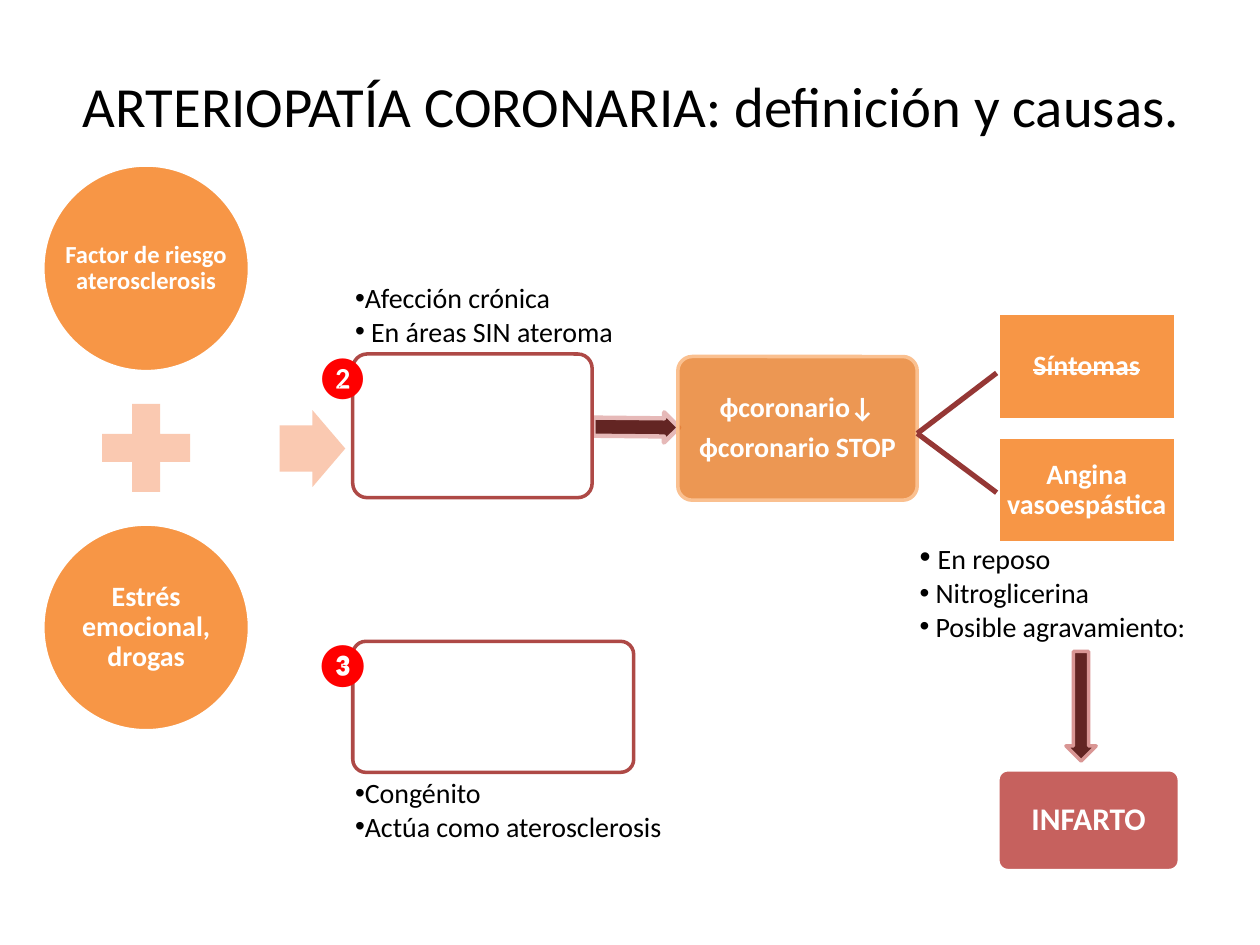
"""Build the coronary artery disease slide."""
from lxml import etree
from pptx import Presentation, util as u
from pptx.dml.color import RGBColor
from pptx.enum import shapes, text
from pptx.oxml.ns import qn

KIND = shapes.MSO_SHAPE
ORANGE, PEACH, MAROON, RED = "F79646", "FAC9B1", "632523", "AE4946"
WHITE, BLACK = "FFFFFF", "000000"
LABEL = {"size": u.Pt(16), "bold": True, "name": "Calibri"}
BODY = {"size": u.Pt(16), "name": "Calibri"}


def paint(color_format, color):
    """Set a color format from a hex string."""
    color_format.rgb = RGBColor.from_string(color)


def style(target, values):
    """Set each attribute in a dict of format values."""
    for name, value in values.items():
        setattr(target, name, value)


def inches(box):
    """Convert a sequence of numbers to lengths."""
    return [u.Inches(value) for value in box]


def add_block(slide, kind, box, fill, line=None, width=2, alpha=None, adjustments=()):
    """Add a filled preset shape."""
    shape = slide.shapes.add_shape(kind, *inches(box))
    shape.shadow.inherit = False
    shape.fill.solid()
    paint(shape.fill.fore_color, fill)
    if alpha:
        color = shape.fill._xPr.find(qn("a:solidFill"))[0]
        etree.SubElement(color, qn("a:alpha")).set("val", str(alpha * 1000))
    if line:
        paint(shape.line.color, line)
        shape.line.width = u.Pt(width)
    else:
        shape.line.fill.background()
    for index, value in enumerate(adjustments):
        shape.adjustments[index] = value
    return shape


def write(shape, lines, font, color=WHITE, inset=0.07, strike=False):
    """Write centred label lines into a shape."""
    frame = shape.text_frame
    style(frame, {"word_wrap": True, "vertical_anchor": text.MSO_ANCHOR.MIDDLE})
    style(frame, {f"margin_{side}": u.Inches(inset) for side in ("left", "right", "top", "bottom")})
    for index, line in enumerate(lines):
        paragraph = frame.add_paragraph() if index else frame.paragraphs[0]
        style(paragraph, {"alignment": text.PP_ALIGN.CENTER, "line_spacing": 0.9})
        if index:
            paragraph.space_before = u.Pt(5.6)
        run = paragraph.add_run()
        run.text = line
        style(run.font, font)
        paint(run.font.color, color)
        if strike:
            run._r.get_or_add_rPr().set("strike", "sngStrike")


def add_bullets(slide, box, lines):
    """Add a text box of unindented bullets."""
    frame = slide.shapes.add_textbox(*inches(box)).text_frame
    frame.word_wrap = True
    for index, line in enumerate(lines):
        paragraph = frame.add_paragraph() if index else frame.paragraphs[0]
        properties = paragraph._p.get_or_add_pPr()
        etree.SubElement(properties, qn("a:buFont")).set("typeface", "Arial")
        etree.SubElement(properties, qn("a:buChar")).set("char", "•")
        runs = [(" ", 18), (line.strip(), 16)] if line == " En reposo" else [(line, 16)]
        for words, size in runs:
            run = paragraph.add_run()
            run.text = words
            style(run.font, {**BODY, "size": u.Pt(size)})
            paint(run.font.color, BLACK)


def add_number(slide, box, mark, bold):
    """Add a red circled number."""
    frame = slide.shapes.add_textbox(*inches(box)).text_frame
    frame.word_wrap = True
    run = frame.paragraphs[0].add_run()
    run.text = mark
    style(run.font, {"size": u.Pt(24), "name": "Calibri", "bold": bold})
    paint(run.font.color, "FF0000")


def add_title(slide, box):
    """Add the slide title."""
    title = slide.shapes.add_textbox(*inches(box))
    font = {"size": u.Pt(32.4), "name": "Calibri"}
    write(title, ["ARTERIOPATÍA CORONARIA: definición y causas."], font, BLACK, 0.05)
    title.text_frame.paragraphs[0].line_spacing = 1


def add_factors(slide, box):
    """Add the two summed causes and the arrow that leaves them."""
    left, top, width, height = box
    causes = [("Factor de riesgo aterosclerosis", 14, top),
              ("Estrés emocional, drogas", 16, top + height - width)]
    for words, size, y in causes:
        circle = (left, y, width, width)
        add_block(slide, KIND.OVAL, circle, ORANGE, WHITE)
        label = slide.shapes.add_textbox(*inches(circle))
        write(label, [words], {**LABEL, "size": u.Pt(size)}, inset=0.02)
    plus, middle = 0.95, top + height / 2
    add_block(slide, KIND.MATH_PLUS,
              (left + (width - plus) / 2, middle - plus / 2, plus, plus), PEACH)
    add_block(slide, KIND.RIGHT_ARROW, (left + width + 0.24, middle - 0.3, 0.52, 0.61),
              PEACH, adjustments=(0.6, 0.5))


def add_mechanism(slide, box, mark, bullets, bullet_box, bold=False):
    """Add an empty numbered frame with its bullets."""
    left, top, _, _ = box
    add_block(slide, KIND.ROUNDED_RECTANGLE, box, WHITE, RED, adjustments=(0.1,))
    add_bullets(slide, bullet_box, bullets)
    add_number(slide, (left - 0.4, top - 0.08, 0.47, 0.5), mark, bold)


def add_flow(slide, box):
    """Add the coronary flow box and the arrow that reaches it."""
    left, top, _, height = box
    arrow = add_block(slide, KIND.RIGHT_ARROW, (left - 0.67, top + height / 2 - 0.13, 0.68, 0.24),
                      MAROON, "E6B9B8", 2.5, adjustments=(0.6, 0.5))
    arrow.rotation = 0.6
    flow = add_block(slide, KIND.ROUNDED_RECTANGLE, box, "E46C0A", "FAC090",
                     alpha=70, adjustments=(0.1,))
    write(flow, ["фcoronario↓", "фcoronario STOP"], LABEL)


def add_outcomes(slide, box):
    """Add the two outcomes and the lines that branch to them."""
    left, top, width, height = box
    block = 0.84
    outcomes = [("Síntomas", top, True, 2.96),
                ("Angina vasoespástica", top + height - block, False, 3.91)]
    for words, y, strike, end in outcomes:
        shape = add_block(slide, KIND.RECTANGLE, (left, y, width, block), ORANGE, WHITE)
        write(shape, [words], LABEL, strike=strike)
        branch = slide.shapes.add_connector(
            shapes.MSO_CONNECTOR.STRAIGHT, *inches((left - 0.64, 3.44, left - 0.01, end)))
        paint(branch.line.color, "953735")
        branch.line.width = u.Pt(3)
        etree.SubElement(branch._element.spPr, qn("a:effectLst"))


def add_worsening(slide, box):
    """Add the angina notes and the infarction below them."""
    left, top, width, height = box
    add_bullets(slide, (left, top, width, 0.94),
                [" En reposo", " Nitroglicerina", " Posible agravamiento:"])
    add_block(slide, KIND.DOWN_ARROW, (left + width / 2, top + 0.95, 0.24, 0.87),
              MAROON, "D99694")
    infarct = add_block(slide, KIND.ROUNDED_RECTANGLE,
                        (left + 0.72, top + height - 0.8, 1.44, 0.8),
                        "C0504D", WHITE, alpha=90, adjustments=(0.1,))
    write(infarct, ["INFARTO"], {**LABEL, "size": u.Pt(18)})


def main():
    """Build and save the presentation."""
    presentation = Presentation()
    style(presentation, {"slide_width": u.Inches(10), "slide_height": u.Inches(7.5)})
    slide = presentation.slides.add_slide(presentation.slide_layouts[6])
    add_title(slide, (0.51, 0.21, 9, 1.25))
    add_factors(slide, (0.34, 1.31, 1.64, 4.49))
    add_flow(slide, (5.38, 2.83, 1.9, 1.14))
    add_mechanism(slide, (2.8, 2.81, 1.9, 1.14), "❷",
                  ["Afección crónica", " En áreas SIN ateroma"], (2.72, 2.18, 2.44, 0.64))
    add_outcomes(slide, (7.92, 2.49, 1.41, 1.82))
    add_worsening(slide, (7.2, 4.22, 2.52, 2.69))
    add_mechanism(slide, (2.8, 5.09, 2.23, 1.04), "❸",
                  ["Congénito", "Actúa como aterosclerosis"], (2.72, 6.11, 2.99, 0.64), True)
    presentation.save("out.pptx")


if __name__ == "__main__":
    main()
